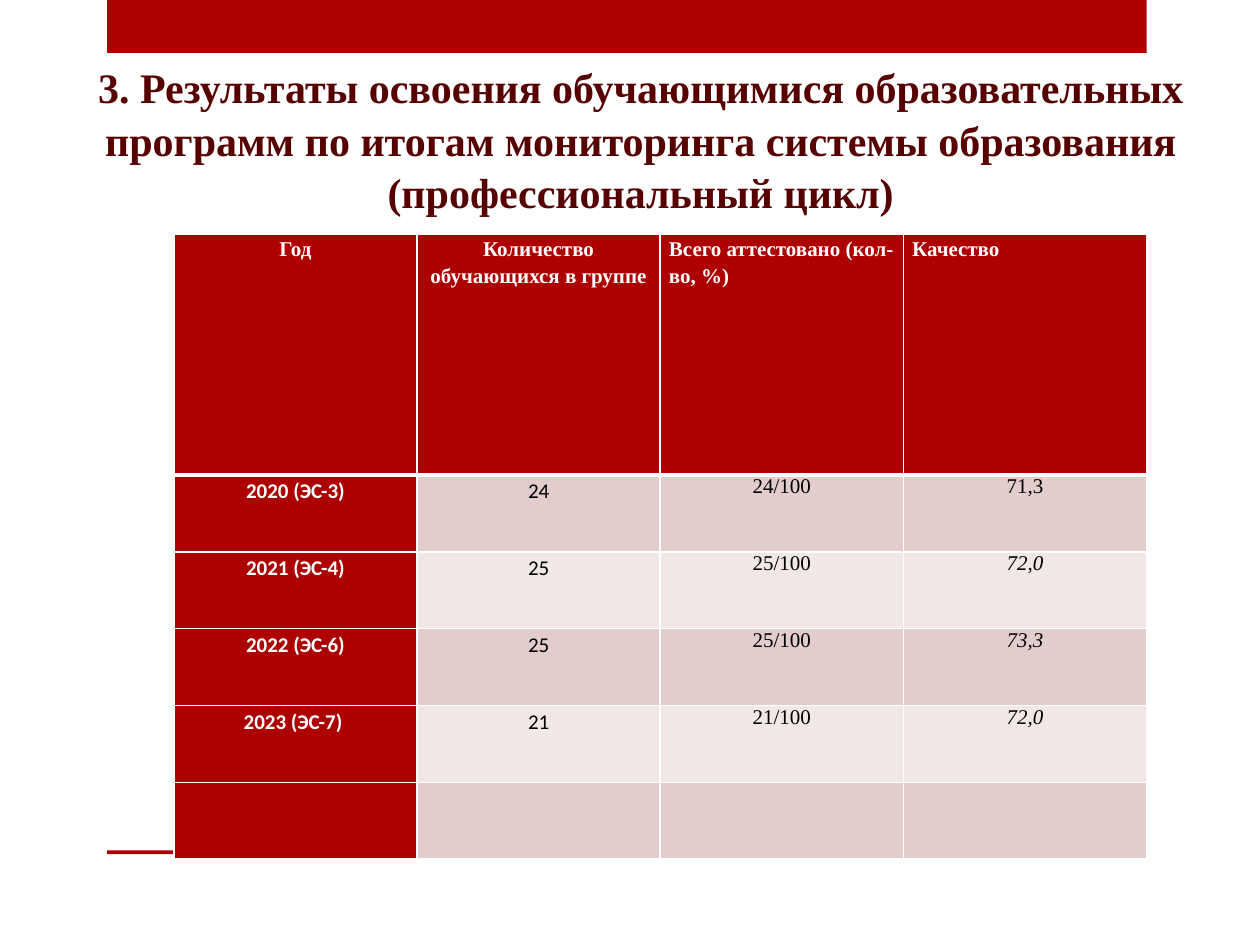
from dataclasses import dataclass

from lxml import etree
from pptx import Presentation, util as u
from pptx.dml.color import RGBColor
from pptx.enum import shapes, text
from pptx.oxml.ns import qn


@dataclass
class Theme:
    red: str = "AD0101"
    dark: str = "560000"
    white: str = "FFFFFF"
    black: str = "000000"
    bands: tuple = ("E3CCCC", "F1E7E7")
    serif: str = "Times New Roman"
    sans: str = "Calibri"
    head: int = 24
    body: int = 12


T = Theme()
MID = text.PP_ALIGN.CENTER
LEFT = text.PP_ALIGN.LEFT
TITLE = (
    "3. Результаты освоения обучающимися образовательных программ "
    "по итогам мониторинга системы образования\n(профессиональный цикл)"
)
HEADS = [
    "Год",
    "Количество обучающихся в группе",
    "Всего аттестовано (кол- во, %)",
    "Качество",
]
ROWS = [
    ["2020 (ЭС-3)", "24", "24/100", "71,3"],
    ["2021 (ЭС-4)", "25", "25/100", "72,0"],
    ["2022 (ЭС-6)", "25", "25/100", "73,3"],
    ["2023 (ЭС-7) ", "21", "21/100", "72,0"],
    [""] * 4,
]


def put(obj, vals):
    for key, val in vals.items():
        setattr(obj, key, val)


def place(box):
    return [u.Inches(v) for v in box]


def paint(fill, hue):
    fill.solid()
    fill.fore_color.rgb = RGBColor.from_string(hue)


def style(para, form, hue, **font):
    put(para, form)
    put(para.font, font)
    para.font.color.rgb = RGBColor.from_string(hue)


def draw_bars(slide, box):
    left, top, wide, high = box
    for y, tall in ((top, 0.42), (top + high - 0.03, 0.03)):
        bar = slide.shapes.add_shape(
            shapes.MSO_SHAPE.RECTANGLE, *place((left, y, wide, tall)))
        bar.shadow.inherit = False
        paint(bar.fill, T.red)
        bar.line.fill.background()


def draw_title(slide, box):
    title = slide.shapes.title
    put(title, dict(zip(("left", "top", "width", "height"), place(box))))
    frame = title.text_frame
    frame.text = TITLE
    put(frame, {"word_wrap": True, "auto_size": text.MSO_AUTO_SIZE.NONE,
                "vertical_anchor": text.MSO_ANCHOR.MIDDLE})
    for para in frame.paragraphs:
        style(para, {"alignment": MID, "line_spacing": 1.05}, T.dark,
              name=T.serif, size=u.Pt(T.head), bold=True)


def edge(cell, row):
    props = cell._tc.get_or_add_tcPr()
    thick = {"lnT": row == 1, "lnB": row == 0}
    for side in ("lnL", "lnR", "lnT", "lnB"):
        wide = u.Pt(3 if thick.get(side) else 1)
        line = etree.SubElement(props, qn("a:" + side), w=str(int(wide)))
        fill = etree.SubElement(line, qn("a:solidFill"))
        etree.SubElement(fill, qn("a:srgbClr"), val=T.white)


def fill_cell(cell, row, col, words):
    lead = row == 0 or col == 0
    put(cell, {"margin_left": u.Inches(0.07), "margin_right": u.Inches(0.07),
               "margin_top": 0, "margin_bottom": 0})
    edge(cell, row)
    paint(cell.fill, T.red if lead else T.bands[(row - 1) % 2])
    cell.text = words
    form = {"alignment": LEFT if row == 0 and col > 1 else MID,
            "line_spacing": 1.15 if row == 0 or col < 2 else 1.0}
    style(cell.text_frame.paragraphs[0], form, T.white if lead else T.black,
          name=T.sans if row and col < 2 else T.serif,
          size=u.Pt(T.body), bold=lead, italic=row > 1 and col == 3)


def draw_table(slide, box):
    data = [HEADS] + ROWS
    wide, high = box[2:]
    first = 1.91
    table = slide.shapes.add_table(
        len(data), len(HEADS), *place(box)).table
    for col in table.columns:
        col.width = u.Inches(wide / len(HEADS))
    for i, row in enumerate(table.rows):
        row.height = u.Inches((high - first) / len(ROWS) if i else first)
    for i, row in enumerate(data):
        for j, words in enumerate(row):
            fill_cell(table.cell(i, j), i, j, words)


def main():
    deck = Presentation()
    put(deck, {"slide_width": u.Inches(10), "slide_height": u.Inches(7.5)})
    slide = deck.slides.add_slide(deck.slide_layouts[5])
    draw_bars(slide, (0.85, 0, 8.25, 6.78))
    draw_title(slide, (0.29, 0.44, 9.59, 1.31))
    draw_table(slide, (1.38, 1.86, 7.72, 4.96))
    deck.save("out.pptx")


if __name__ == "__main__":
    main()
